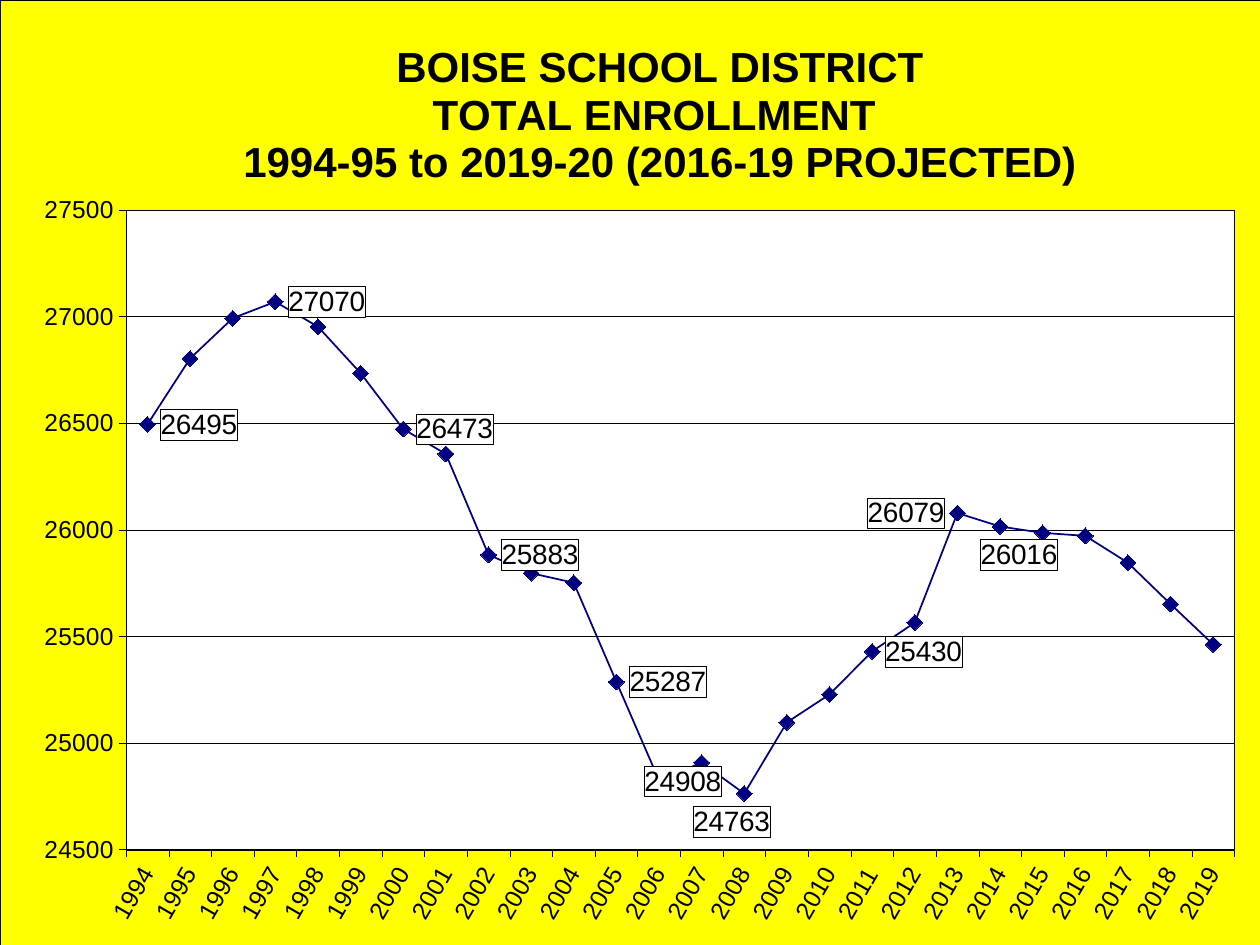
import lxml.etree
import pptx
import pptx.chart.data
import pptx.dml.color
import pptx.enum.chart
import pptx.oxml
import pptx.oxml.ns
import pptx.util

Inches = pptx.util.Inches
Pt = pptx.util.Pt
Place = pptx.enum.chart.XL_LABEL_POSITION
Tick = pptx.enum.chart.XL_TICK_MARK

BLACK = pptx.dml.color.RGBColor(0, 0, 0)
WHITE = pptx.dml.color.RGBColor(255, 255, 255)
YELLOW = pptx.dml.color.RGBColor(255, 255, 0)
NAVY = pptx.dml.color.RGBColor(0, 0, 128)
FONT = "Arial"
THIN = Pt(0.25)

TITLE = [
    "BOISE SCHOOL DISTRICT",
    "TOTAL ENROLLMENT ",
    "1994-95 to 2019-20 (2016-19 PROJECTED)",
]
START = 1994
COUNTS = [
    26495, 26804, 26993, 27070, 26953, 26735, 26473, 26356, 25883,
    25797, 25752, 25287, 24826, 24908, 24763, 25097, 25228, 25430,
    25565, 26079, 26016, 25986, 25972, 25846, 25652, 25463,
]
LABELS = {year: (Place.RIGHT, 0, 0)
          for year in (1994, 1997, 2000, 2002, 2005, 2011)}
LABELS.update({
    2007: (Place.BELOW, -0.015, -0.01),
    2008: (Place.BELOW, -0.01, 0),
    2013: (Place.LEFT, 0, 0),
    2014: (Place.BELOW, 0.015, 0),
})


def style(font, size, bold=False, color=BLACK):
    font.name = FONT
    font.size = Pt(size)
    font.bold = bold
    font.color.rgb = color


def write(para, text, **form):
    run = para.add_run()
    run.text = text
    style(run.font, **form)


def stroke(line, color=BLACK, width=THIN):
    line.color.rgb = color
    line.width = width


def paint(fill, color):
    fill.solid()
    fill.fore_color.rgb = color


def panel(color):
    return pptx.oxml.parse_xml(
        f'<c:spPr {pptx.oxml.ns.nsdecls("c", "a")}>'
        f'<a:solidFill><a:srgbClr val="{color}"/></a:solidFill>'
        f'<a:ln w="{THIN}"><a:solidFill><a:srgbClr val="{BLACK}"/>'
        '</a:solidFill></a:ln></c:spPr>')


def layout(inner=False, **spots):
    root = pptx.oxml.parse_xml(
        f'<c:layout {pptx.oxml.ns.nsdecls("c")}><c:manualLayout/></c:layout>')

    def put(tag, value):
        name = pptx.oxml.ns.qn(f"c:{tag}")
        lxml.etree.SubElement(root[0], name).set("val", str(value))

    if inner:
        put("layoutTarget", "inner")
    if "w" in spots or inner is None:
        put("xMode", "edge")
        put("yMode", "edge")
    for tag, value in spots.items():
        put(tag, value)
    return root


def clear(node):
    for old in node.xpath("c:layout"):
        node.remove(old)


def add_title(chart):
    frame = chart.chart_title.text_frame
    for num, text in enumerate(TITLE):
        para = frame.add_paragraph() if num else frame.paragraphs[0]
        write(para, text, size=24, bold=True)
    node = chart._chartSpace.xpath("c:chart/c:title")[0]
    clear(node)
    node.xpath("c:tx")[0].addnext(layout(inner=None, x=0.19, y=0.04))


def set_axes(chart):
    for axis in (chart.category_axis, chart.value_axis):
        style(axis.tick_labels.font, 14)
        stroke(axis.format.line)
        axis.major_tick_mark = Tick.OUTSIDE
        axis.minor_tick_mark = Tick.NONE
    body = chart.category_axis._element.xpath("c:txPr/a:bodyPr")[0]
    body.set("rot", str(-60 * 60000))
    body.set("vert", "horz")
    axis = chart.value_axis
    axis.minimum_scale, axis.maximum_scale = 24500, 27500
    axis.major_unit = 500
    axis.has_major_gridlines = True
    stroke(axis.major_gridlines.format.line)


def set_line(series):
    series.smooth = False
    stroke(series.format.line, NAVY, Pt(1))
    mark = series.marker
    mark.style = pptx.enum.chart.XL_MARKER_STYLE.DIAMOND
    mark.size = 9
    paint(mark.format.fill, NAVY)
    stroke(mark.format.line, NAVY)


def add_labels(series):
    series.data_labels.show_value = False
    for year, (place, left, top) in LABELS.items():
        num = year - START
        label = series.points[num].data_label
        style(label.font, 16)
        label.position = place
        node = series._element.xpath(
            f"c:dLbls/c:dLbl[c:idx/@val='{num}']")[0]
        node.xpath("c:txPr")[0].addprevious(panel(WHITE))
        if left or top:
            node.xpath("c:idx")[0].addnext(layout(x=left, y=top))


def add_graph(slide, left, top, width, height):
    data = pptx.chart.data.CategoryChartData(number_format="0")
    data.categories = [str(START + num) for num in range(len(COUNTS))]
    data.add_series("Enrollment", COUNTS)
    chart = slide.shapes.add_chart(
        pptx.enum.chart.XL_CHART_TYPE.LINE_MARKERS,
        left, top, width, height, data).chart
    style(chart.font, 10)
    chart.has_legend = False
    chart.plots[0].vary_by_categories = False
    add_title(chart)
    set_axes(chart)
    series = chart.plots[0].series[0]
    set_line(series)
    add_labels(series)
    root = chart._chartSpace
    root.xpath("c:chart")[0].addnext(panel(YELLOW))
    area = root.xpath("c:chart/c:plotArea")[0]
    clear(area)
    area.insert(0, layout(inner=True, x=0.1, y=0.22, w=0.88, h=0.67))
    area.append(panel(WHITE))


def main():
    deck = pptx.Presentation()
    deck.slide_width, deck.slide_height = Inches(10), Inches(7.5)
    slide = deck.slides.add_slide(deck.slide_layouts[6])
    add_graph(slide, Inches(0), Inches(0), Inches(10), Inches(7.58))
    deck.save("out.pptx")


if __name__ == "__main__":
    main()
